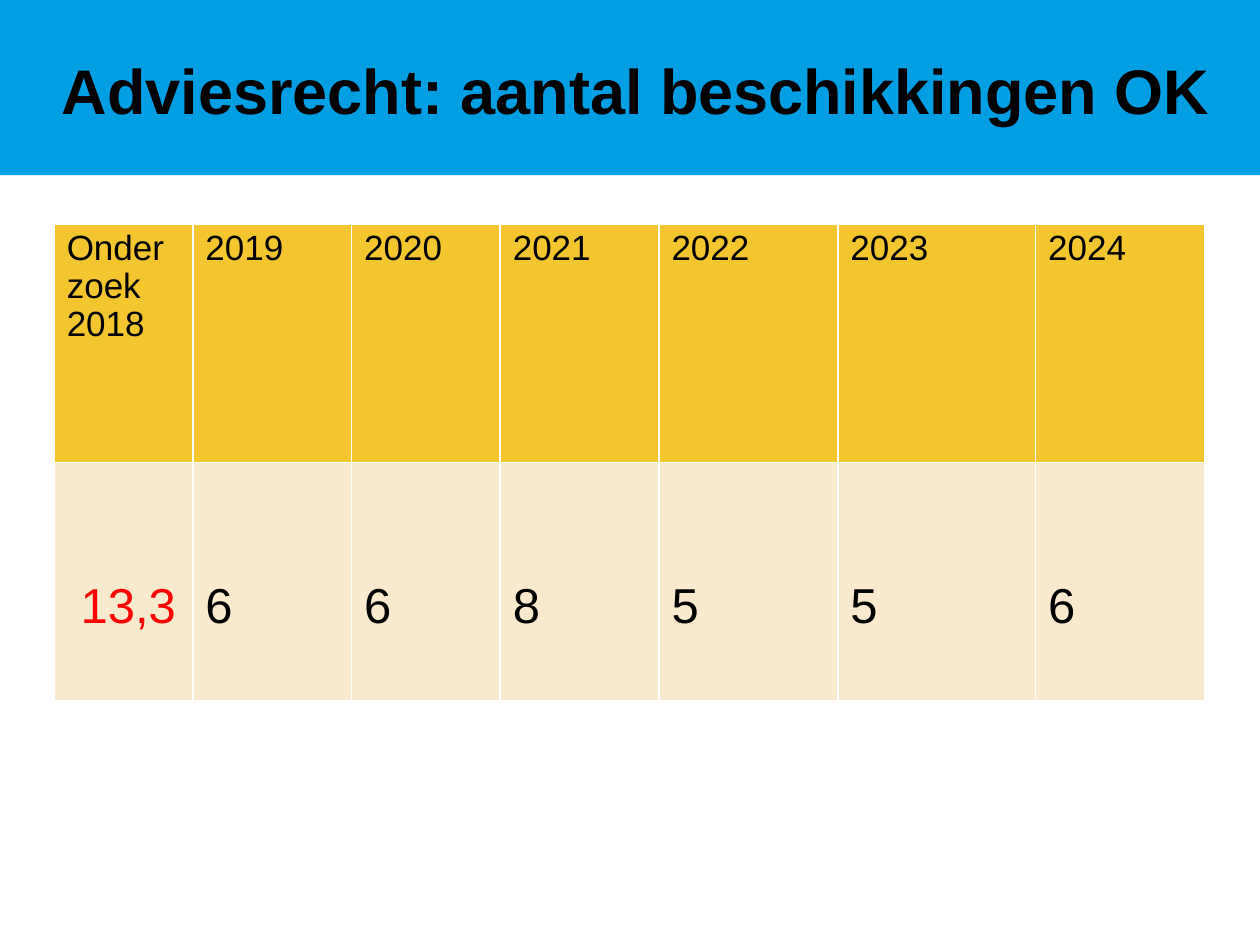
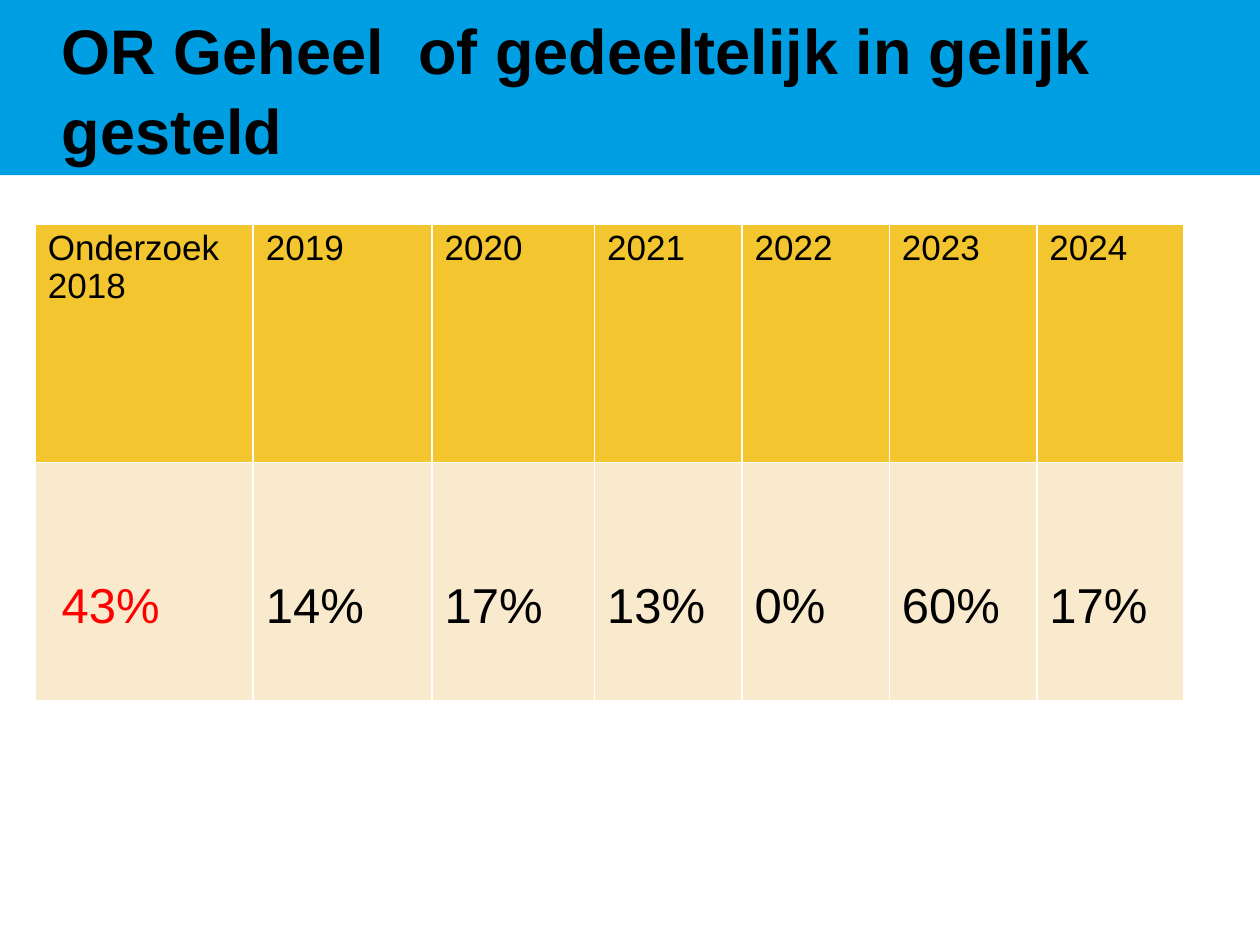
import pptx
import pptx.dml.color
import pptx.enum.text
import pptx.oxml
import pptx.oxml.ns
import pptx.util

Inches = pptx.util.Inches
Pt = pptx.util.Pt
RGBColor = pptx.dml.color.RGBColor

YEARS = ["2019", "2020", "2021", "2022", "2023", "2024"]
SLIDES = [
    {
        "title": "Adviesrecht: aantal beschikkingen OK",
        "header": ["Onderzoek 2018"] + YEARS,
        "values": ["13,3", "6", "6", "8", "5", "5", "6"],
        "table_left": 0.43,
        "column_widths": [1.1, 1.26, 1.18, 1.26, 1.42, 1.57, 1.34],
    },
    {
        "title": "OR Geheel  of gedeeltelijk in gelijk gesteld",
        "header": ["Onderzoek\n2018"] + YEARS,
        "values": ["43%", "14%", "17%", "13%", "0%", "60%", "17%"],
        "table_left": 0.28,
        "column_widths": [1.73, 1.42, 1.29] + [1.17] * 4,
    },
]

FONT = "Arial"
BLACK = RGBColor(0x00, 0x00, 0x00)
RED = RGBColor(0xFF, 0x00, 0x00)
BAND_BLUE = RGBColor(0x00, 0x9F, 0xE4)
HEADER_GOLD = RGBColor(0xF3, 0xC5, 0x2F)
VALUE_CREAM = RGBColor(0xFA, 0xEA, 0xCD)
BORDER_WHITE = RGBColor(0xFF, 0xFF, 0xFF)

SLIDE_WIDTH, SLIDE_HEIGHT = 10, 7.5
BAND_HEIGHT = 1.39
TABLE_TOP = 1.78
ROW_HEIGHT = 1.89
VALUE_TOP_MARGIN = 0.93
RESEARCH_LEFT_MARGIN = 0.21
TITLE_ONLY_LAYOUT = 5


def format_text(text_frame, size, color, line_spacing, bold=False):
    for paragraph in text_frame.paragraphs:
        paragraph.alignment = pptx.enum.text.PP_ALIGN.LEFT
        paragraph.line_spacing = line_spacing
        for run in paragraph.runs:
            run.font.name = FONT
            run.font.size = Pt(size)
            run.font.bold = bold
            run.font.color.rgb = color


def add_title_band(slide, text):
    band = slide.shapes.title
    band.left = band.top = 0
    band.width, band.height = Inches(SLIDE_WIDTH), Inches(BAND_HEIGHT)
    band.fill.solid()
    band.fill.fore_color.rgb = BAND_BLUE
    text_frame = band.text_frame
    text_frame.text = text
    text_frame.word_wrap = True
    text_frame.auto_size = pptx.enum.text.MSO_AUTO_SIZE.NONE
    text_frame.vertical_anchor = pptx.enum.text.MSO_ANCHOR.MIDDLE
    text_frame.margin_left = Inches(0.49)
    format_text(text_frame, 36, BLACK, 1.05, bold=True)


def add_borders(cell):
    properties = cell._tc.get_or_add_tcPr()
    for side in ("lnL", "lnR", "lnT", "lnB"):
        properties.append(pptx.oxml.parse_xml(
            f'<a:{side} {pptx.oxml.ns.nsdecls("a")} w="{Pt(1)}"><a:solidFill>'
            f'<a:srgbClr val="{BORDER_WHITE}"/></a:solidFill></a:{side}>'))


def fill_cell(cell, text, size, text_color, fill_color, line_spacing):
    cell.text_frame.text = text
    format_text(cell.text_frame, size, text_color, line_spacing)
    add_borders(cell)
    cell.fill.solid()
    cell.fill.fore_color.rgb = fill_color


def add_year_table(slide, content):
    widths = content["column_widths"]
    table = slide.shapes.add_table(
        2, len(widths), Inches(content["table_left"]), Inches(TABLE_TOP),
        Inches(sum(widths)), Inches(2 * ROW_HEIGHT)).table
    for row in table.rows:
        row.height = Inches(ROW_HEIGHT)
    for index, width in enumerate(widths):
        table.columns[index].width = Inches(width)
        fill_cell(table.cell(0, index), content["header"][index],
                  20, BLACK, HEADER_GOLD, 0.97)
        value_cell = table.cell(1, index)
        fill_cell(value_cell, content["values"][index],
                  28, BLACK if index else RED, VALUE_CREAM, 1.0)
        value_cell.margin_top = Inches(VALUE_TOP_MARGIN)
    research_cell = table.cell(1, 0)
    research_cell.margin_left = Inches(RESEARCH_LEFT_MARGIN)
    research_cell.margin_right = Inches(0.05)


def main():
    presentation = pptx.Presentation()
    presentation.slide_width = Inches(SLIDE_WIDTH)
    presentation.slide_height = Inches(SLIDE_HEIGHT)
    layout = presentation.slide_layouts[TITLE_ONLY_LAYOUT]
    for content in SLIDES:
        slide = presentation.slides.add_slide(layout)
        add_title_band(slide, content["title"])
        add_year_table(slide, content)
    presentation.save("out.pptx")


if __name__ == "__main__":
    main()
